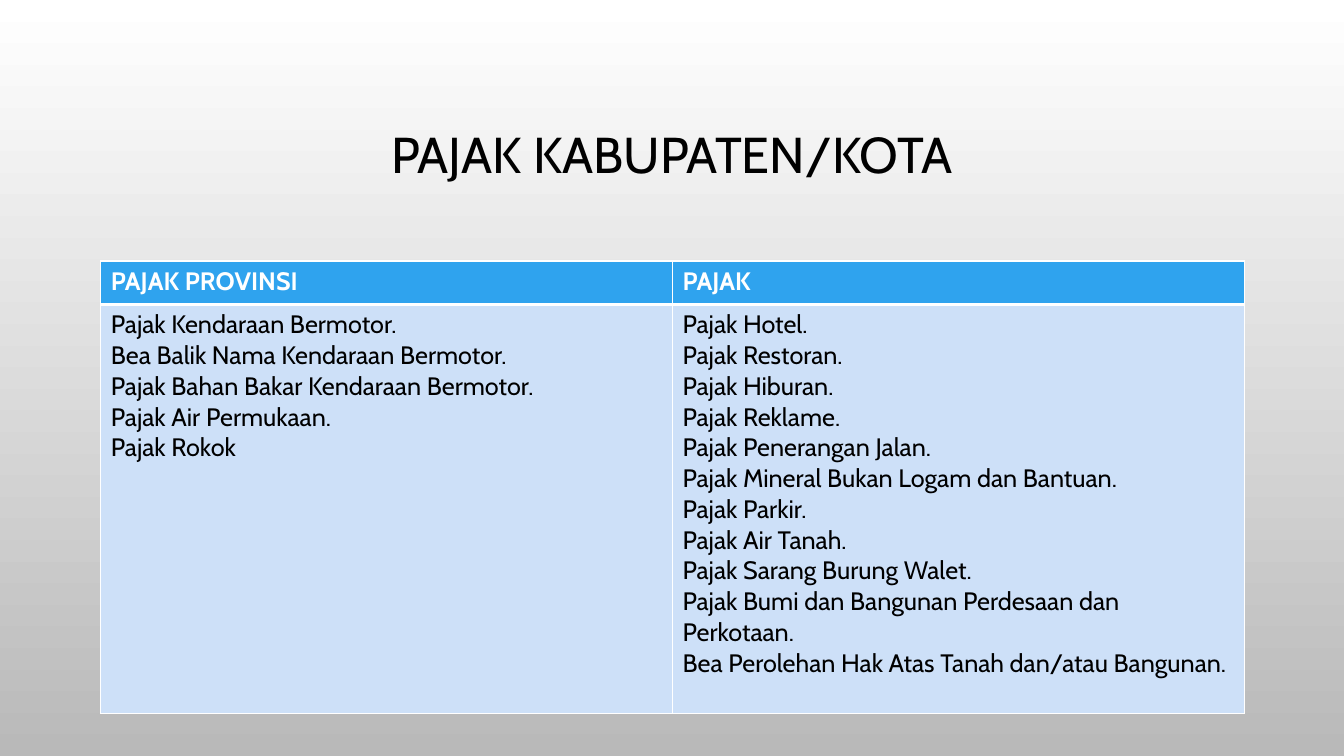
"""Build a slide comparing provincial and regency taxes in a two-column table."""
from lxml import etree
from pptx import Presentation
from pptx import util as u
from pptx.dml import color
from pptx.enum import text
from pptx.oxml import ns


def rgb(value):
    return color.RGBColor.from_string(value)


def add_run(paragraph, wording, size, hex_color, bold=False):
    run = paragraph.add_run()
    run.text = wording
    run.font.name = "Cabin"
    run.font.size = u.Pt(size)
    run.font.bold = bold
    run.font.color.rgb = rgb(hex_color)


presentation = Presentation()
presentation.slide_width = u.Inches(13.33)
presentation.slide_height = u.Inches(7.5)
slide = presentation.slides.add_slide(presentation.slide_layouts[6])

background = slide.background.fill
background.gradient()
background.gradient_angle = 270
for stop, shade in zip(background.gradient_stops, ("FFFFFF", "B9B9B9")):
    stop.color.rgb = rgb(shade)

title = slide.shapes.add_textbox(u.Inches(1), u.Inches(0.68), u.Inches(11.33), u.Inches(1.75))
title.text_frame.word_wrap = True
title.text_frame.vertical_anchor = text.MSO_ANCHOR.MIDDLE
paragraph = title.text_frame.paragraphs[0]
paragraph.alignment = text.PP_ALIGN.CENTER
paragraph.line_spacing = 0.9
add_run(paragraph, "PAJAK KABUPATEN/KOTA", 36, "000000")

taxes = {
    "PAJAK PROVINSI": [
        "Pajak Kendaraan Bermotor.",
        "Bea Balik Nama Kendaraan Bermotor.",
        "Pajak Bahan Bakar Kendaraan Bermotor.",
        "Pajak Air Permukaan.",
        "Pajak Rokok",
    ],
    "PAJAK": [
        "Pajak Hotel.",
        "Pajak Restoran.",
        "Pajak Hiburan.",
        "Pajak Reklame.",
        "Pajak Penerangan Jalan.",
        "Pajak Mineral Bukan Logam dan Bantuan.",
        "Pajak Parkir.",
        "Pajak Air Tanah.",
        "Pajak Sarang Burung Walet.",
        "Pajak Bumi dan Bangunan Perdesaan dan Perkotaan.",
        "Bea Perolehan Hak Atas Tanah dan/atau Bangunan.",
    ],
}
table = slide.shapes.add_table(
    2, 2, u.Inches(1), u.Inches(2.59), u.Inches(11.33), u.Inches(4.49)
).table
table.rows[0].height = u.Inches(0.43)
table.rows[1].height = u.Inches(4.06)

for column, (heading, entries) in enumerate(taxes.items()):
    table.columns[column].width = u.Inches(5.67)
    rows = [([heading], "2FA3EE", "FFFFFF", True), (entries, "CDE0F8", "000000", False)]
    for row, (lines, fill_color, font_color, is_header) in enumerate(rows):
        cell = table.cell(row, column)
        properties = cell._tc.get_or_add_tcPr()
        for side in ("L", "R", "T", "B"):
            thick = (side == "B" and is_header) or (side == "T" and not is_header)
            width = u.Pt(3 if thick else 1)
            border = etree.SubElement(properties, ns.qn(f"a:ln{side}"), w=str(width))
            border_fill = etree.SubElement(border, ns.qn("a:solidFill"))
            etree.SubElement(border_fill, ns.qn("a:srgbClr"), val="FFFFFF")
        cell.fill.solid()
        cell.fill.fore_color.rgb = rgb(fill_color)
        for index, line in enumerate(lines):
            frame = cell.text_frame
            paragraph = frame.add_paragraph() if index else frame.paragraphs[0]
            add_run(paragraph, line, 18, font_color, is_header)

presentation.save("out.pptx")
